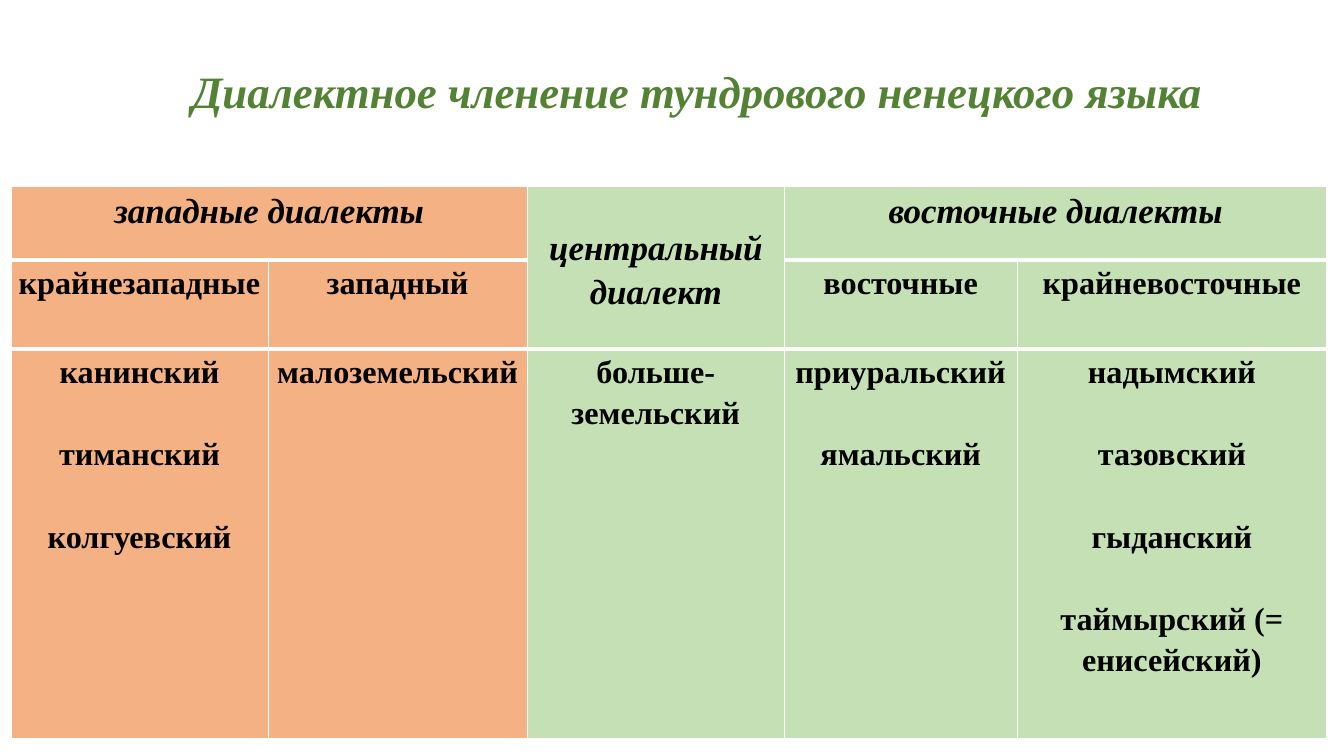
from lxml.etree import SubElement
from pptx import Presentation
from pptx.dml.color import RGBColor
from pptx.enum.text import MSO_ANCHOR, PP_ALIGN
from pptx.oxml.ns import qn
from pptx.util import Inches, Pt

WEST, EAST, GREEN, BLACK, WHITE = "F4B183", "C5E0B4", "548235", "000000", "FFFFFF"
THIN, THICK = 1, 3
LINE_GAP = 29.5


def add_text(paragraph, text, size, color, italic, line_spacing):
    paragraph.alignment = PP_ALIGN.CENTER
    paragraph.line_spacing = line_spacing
    run = paragraph.add_run()
    run.text = text
    font = run.font
    font.name, font.size = "Times New Roman", Pt(size)
    font.bold, font.italic = True, italic
    font.color.rgb = RGBColor.from_string(color)


def add_border(cell, side, width):
    line = SubElement(cell._tc.get_or_add_tcPr(), qn(f"a:ln{side}"), w=str(Pt(width)))
    fill = SubElement(line, qn("a:solidFill"))
    SubElement(fill, qn("a:srgbClr"), val=WHITE)


presentation = Presentation()
presentation.slide_width, presentation.slide_height = Inches(13.33), Inches(7.5)
slide = presentation.slides.add_slide(presentation.slide_layouts[5])

title = slide.shapes.title
title.left, title.top = Inches(0.62), Inches(0.3)
title.width, title.height = Inches(12.59), Inches(1.27)
title.text_frame.vertical_anchor = MSO_ANCHOR.MIDDLE
add_text(title.text_frame.paragraphs[0],
         "Диалектное членение тундрового ненецкого языка", 32, GREEN, True, 0.9)

# Each cell lists its paragraphs; empty cells are covered by a merged neighbour.
dialects = [
    [["западные диалекты"], [], ["центральный диалект"], ["восточные диалекты"], []],
    [["крайнезападные"], ["западный"], [], ["восточные"], ["крайневосточные"]],
    [["канинский", "тиманский", "колгуевский"],
     ["малоземельский"],
     ["больше-земельский"],
     ["приуральский", "ямальский"],
     ["надымский", "тазовский", "гыданский", "таймырский (= енисейский)"]],
]
column_widths = [2.55, 2.57, 2.55, 2.31, 3.07]
row_heights = [0.73, 0.87, 3.87]

table = slide.shapes.add_table(
    len(row_heights), len(column_widths), Inches(0.11), Inches(1.85),
    Inches(sum(column_widths)), Inches(sum(row_heights))).table
for column, width in zip(table.columns, column_widths):
    column.width = Inches(width)
for row, height in zip(table.rows, row_heights):
    row.height = Inches(height)

table.cell(0, 0).merge(table.cell(0, 1))
table.cell(0, 2).merge(table.cell(1, 2))
table.cell(0, 3).merge(table.cell(0, 4))

for r, row_dialects in enumerate(dialects):
    for c, names in enumerate(row_dialects):
        cell = table.cell(r, c)
        borders = {"L": THIN, "R": THIN,
                   "T": THICK if r > 0 else THIN,
                   "B": THICK if r < len(dialects) - 1 else THIN}
        for side, width in borders.items():
            add_border(cell, side, width)
        cell.fill.solid()
        cell.fill.fore_color.rgb = RGBColor.from_string(WEST if c < 2 else EAST)
        cell.margin_left = cell.margin_right = Inches(0.07)
        cell.margin_top = cell.margin_bottom = 0
        cell.vertical_anchor = MSO_ANCHOR.MIDDLE if (r, c) == (0, 2) else MSO_ANCHOR.TOP
        for i, name in enumerate(names):
            frame = cell.text_frame
            paragraph = frame.add_paragraph() if i else frame.paragraphs[0]
            if i:
                paragraph.space_before = Pt(LINE_GAP)
            add_text(paragraph, name, 25 if r == 0 else 23, BLACK, r == 0, 1.15)

presentation.save("out.pptx")
